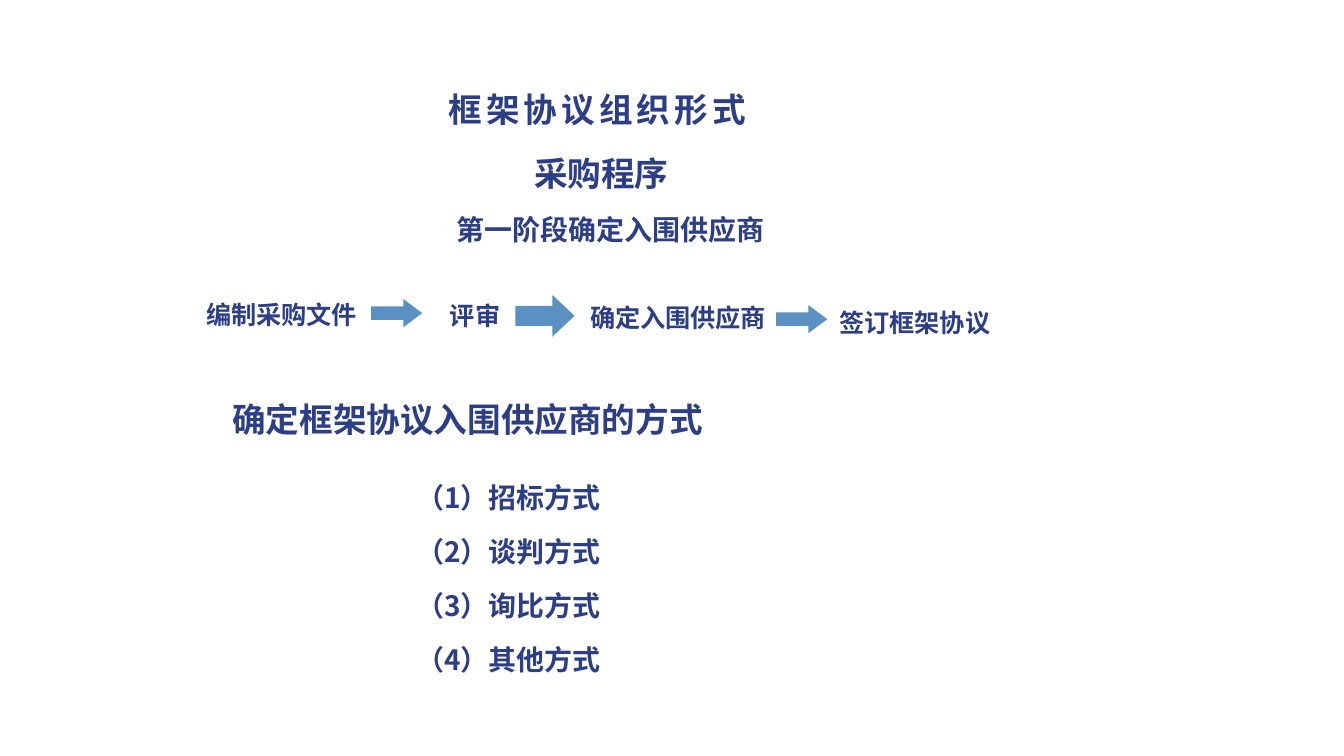
from dataclasses import dataclass

import pptx
import pptx.dml.color
import pptx.enum.shapes
import pptx.enum.text
import pptx.oxml.ns
import pptx.util
from lxml import etree

ALIGN = pptx.enum.text.PP_ALIGN
ANCHOR = pptx.enum.text.MSO_ANCHOR
CELL = 0.1  # inches: the slide is 100 columns wide and 56.25 rows high
COLUMNS, ROWS = 100, 56.25


@dataclass(frozen=True)
class Theme:
    font: str = "Noto Sans CJK SC"
    ink: str = "2C3E86"
    arrow: str = "5A90C2"
    heading: float = 18
    item: float = 15
    step: float = 13.5


@dataclass(frozen=True)
class Area:
    column: float
    row: float
    columns: float
    rows: float

    def lengths(self) -> list[int]:
        return [cells(n) for n in (self.column, self.row, self.columns, self.rows)]


@dataclass(frozen=True)
class Line:
    text: str
    size: float
    before: float = 0
    indent: float = 0
    align: ALIGN = ALIGN.LEFT
    spacing: float | None = None
    tracking: float = 0


@dataclass(frozen=True)
class Block:
    area: Area
    lines: list[Line]
    inset: bool = True
    anchor: ANCHOR = ANCHOR.TOP


@dataclass(frozen=True)
class Arrow:
    area: Area
    head: float  # head length as a share of the arrow's height


THEME = Theme()
METHODS = ["招标方式", "谈判方式", "询比方式", "其他方式"]

HEADINGS = [
    Block(Area(26.8, 3.75, 35.3, 5.4),
          [Line("框架协议组织形式", THEME.heading, align=ALIGN.CENTER, spacing=45, tracking=2.2)],
          inset=False, anchor=ANCHOR.MIDDLE),
    Block(Area(39.65, 11.25, 31.3, 3.1),
          [Line("采购程序", THEME.heading, before=0.7, indent=0.1)], inset=False),
    Block(Area(33, 15.35, 25, 3.5), [Line("第一阶段确定入围供应商", THEME.item)]),
]
STEPS = [
    Block(Area(14.35, 21.8, 13.4, 3.3), [Line("编制采购文件", THEME.step)]),
    Block(Area(31.85, 21.85, 7, 3.3), [Line("评审", THEME.step, align=ALIGN.CENTER)]),
    Block(Area(42.95, 22, 16, 3.3), [Line("确定入围供应商", THEME.step)]),
    Block(Area(61.5, 22.35, 13.4, 3.3), [Line("签订框架协议", THEME.step)]),
]
WAYS = Block(
    Area(15.8, 29.2, 69.4, 21.9),
    [Line("确定框架协议入围供应商的方式", THEME.heading, before=0.7, indent=0.5)]
    + [Line(f"（{number}）{method}", THEME.item, before=22.2 if number == 1 else 10.8, indent=14.2)
       for number, method in enumerate(METHODS, start=1)],
)
ARROWS = [
    Arrow(Area(27.62, 22.25, 3.8, 2.1), 0.67),
    Arrow(Area(38.35, 21.95, 4.4, 3.1), 0.53),
    Arrow(Area(57.75, 22.7, 3.8, 2.1), 0.67),
]


def cells(count: float) -> int:
    return pptx.util.Inches(count * CELL)


def color(value: str) -> pptx.dml.color.RGBColor:
    return pptx.dml.color.RGBColor.from_string(value)


def add_line(para, line: Line) -> None:
    para.alignment = line.align
    para.space_before = pptx.util.Pt(line.before)
    if line.spacing:
        para.line_spacing = pptx.util.Pt(line.spacing)
    if line.indent:
        para._p.get_or_add_pPr().set("marL", str(cells(line.indent)))
    span = para.add_run()
    span.text = line.text
    span.font.name = THEME.font
    span.font.size = pptx.util.Pt(line.size)
    span.font.bold = True
    span.font.color.rgb = color(THEME.ink)
    properties = span._r.get_or_add_rPr()
    etree.SubElement(properties, pptx.oxml.ns.qn("a:ea"), typeface=THEME.font)
    if line.tracking:
        properties.set("spc", str(round(line.tracking * 100)))


def add_block(page, block: Block) -> None:
    box = page.shapes.add_textbox(*block.area.lengths())
    frame = box.text_frame
    frame.word_wrap = True
    frame.auto_size = pptx.enum.text.MSO_AUTO_SIZE.SHAPE_TO_FIT_TEXT
    frame.vertical_anchor = block.anchor
    if not block.inset:
        frame.margin_left = frame.margin_right = frame.margin_bottom = 0
        frame.margin_top = cells(0.1)
    for index, line in enumerate(block.lines):
        para = frame.add_paragraph() if index else frame.paragraphs[0]
        add_line(para, line)


def add_arrow(page, arrow: Arrow) -> None:
    shape = page.shapes.add_shape(
        pptx.enum.shapes.MSO_SHAPE.RIGHT_ARROW, *arrow.area.lengths())
    shape.adjustments[0] = 0.48
    shape.adjustments[1] = arrow.head
    shape.shadow.inherit = False
    shape.fill.solid()
    shape.fill.fore_color.rgb = color(THEME.arrow)
    shape.line.fill.background()


def main() -> None:
    deck = pptx.Presentation()
    deck.slide_width, deck.slide_height = cells(COLUMNS), cells(ROWS)
    page = deck.slides.add_slide(deck.slide_layouts[6])
    for arrow in ARROWS:
        add_arrow(page, arrow)
    for block in [*HEADINGS, *STEPS, WAYS]:
        add_block(page, block)
    deck.save("out.pptx")


if __name__ == "__main__":
    main()
